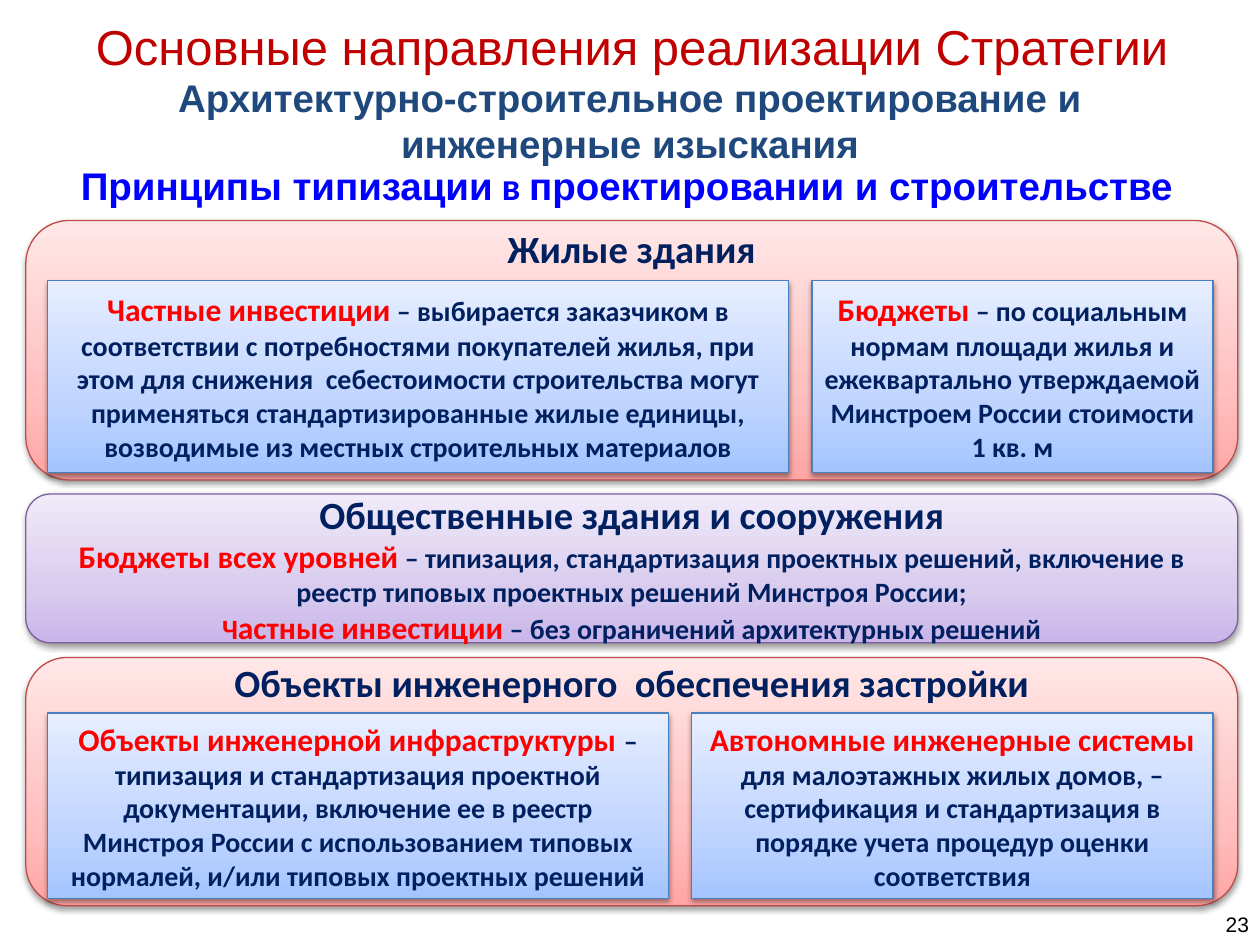
from copy import deepcopy

from lxml import etree
from pptx import Presentation
from pptx.dml.color import RGBColor
from pptx.enum.shapes import MSO_SHAPE
from pptx.enum.text import MSO_ANCHOR, MSO_AUTO_SIZE, PP_ALIGN
from pptx.oxml.ns import qn
from pptx.util import Pt

CENTER, RIGHT = PP_ALIGN.CENTER, PP_ALIGN.RIGHT
MIDDLE = MSO_ANCHOR.MIDDLE
NO_AUTOFIT = MSO_AUTO_SIZE.NONE
RECTANGLE, ROUNDED = MSO_SHAPE.RECTANGLE, MSO_SHAPE.ROUNDED_RECTANGLE
TITLE_ONLY = 5

COLORS = {
    "navy": "002060", "red": "FF0000", "dark red": "C00000",
    "blue": "0000FF", "steel": "1F497D", "black": "000000",
}
THEMES = {
    "pink": (("FFA6A5", "FFC0BF", "FFE7E7"), "BF4C48"),
    "violet": (("C9B5E8", "D8CBEE", "F0EAF9"), "7D60A0"),
    "sky": (("A4C4FF", "BFD4FF", "E6EEFF"), "4B7EBC"),
}
STOPS = (0, 0.35, 1)

STYLES = {
    "heading": ("Calibri", 22, True, "navy"),
    "lead": ("Calibri", 18, True, "red"),
    "initial": ("Calibri", 16, True, "red"),
    "body": ("Calibri", 16, True, "navy"),
    "title": ("Arial", 22, True, "blue"),
    "title joint": ("Calibri", 22, True, "blue"),
    "subject": ("Arial", 22, True, "steel"),
    "strategy": ("Arial", 28, False, "dark red"),
    "number": ("Arial", 12, False, "black"),
}

TITLE = [[("Принципы типизации", "title"), (" в ", "title joint"),
          ("проектировании и строительстве", "title")]]
TITLE_FRAME = (27.4, 89.3, 661.7, 32.4)

LABELS = [
    ((2.9, 43.2, 714.2, 51.1), CENTER,
     [[("Архитектурно-строительное проектирование и", "subject")],
      [("инженерные изыскания", "subject")]]),
    ((14.4, 0, 693.4, 52.6), CENTER,
     [[("Основные направления реализации Стратегии", "strategy")]]),
    ((689.8, 513.4, 31, 28.8), RIGHT, [[("23", "number")]]),
]

PUBLIC_BUILDINGS = [
    [("Общественные здания и сооружения", "heading")],
    [("Бюджеты всех уровней", "lead"),
     (" – типизация, стандартизация проектных решений, включение в реестр "
      "типовых проектных решений Минстроя России;", "body")],
    [("Ч", "initial"), ("астные инвестиции", "lead"),
     (" – без ограничений архитектурных решений", "body")],
]

PANEL_LEFT, PANEL_WIDTH = 14.7, 692.6
CARD_LEFT, CARD_RIGHT, CARD_GAP = 27.2, 693.2, 13.4
CARD_BOTTOM_MARGIN = 4.3

PANELS = [
    {
        "top": 126, "height": 148.3, "theme": "pink", "heading center": 15.7,
        "text": [[("Жилые здания", "heading")]],
        "card top": 160.4, "first card width": 423.4,
        "cards": [
            [[("Частные инвестиции", "lead"),
              (" – выбирается заказчиком в соответствии с потребностями "
               "покупателей жилья, при этом для снижения  себестоимости "
               "строительства могут применяться стандартизированные жилые "
               "единицы, возводимые из местных строительных материалов",
               "body")]],
            [[("Бюджеты", "lead"),
              (" – по социальным нормам площади жилья и ежеквартально "
               "утверждаемой Минстроем России стоимости 1 кв. м", "body")]],
        ],
    },
    {
        "top": 282.3, "height": 85, "theme": "violet",
        "text": PUBLIC_BUILDINGS, "cards": [],
    },
    {
        "top": 375.7, "height": 141.9, "theme": "pink", "heading center": 14,
        "text": [[("Объекты инженерного  обеспечения застройки", "heading")]],
        "card top": 407.5, "first card width": 354.7,
        "cards": [
            [[("Объекты инженерной инфраструктуры ", "lead"),
              ("– типизация и стандартизация проектной документации, "
               "включение ее в реестр Минстроя России с использованием "
               "типовых нормалей, и/или типовых проектных решений", "body")]],
            [[("Автономные инженерные системы ", "lead"),
              ("для малоэтажных жилых домов, – сертификация и "
               "стандартизация в порядке учета процедур оценки "
               "соответствия", "body")]],
        ],
    },
]


def write_text(shape, paragraphs, alignment=CENTER):
    """Fill a shape with paragraphs of styled runs."""
    frame = shape.text_frame
    frame.word_wrap = True
    frame.auto_size = NO_AUTOFIT
    frame.vertical_anchor = MIDDLE
    for index, runs in enumerate(paragraphs):
        paragraph = frame.add_paragraph() if index else frame.paragraphs[0]
        paragraph.alignment = alignment
        for text, style in runs:
            run = paragraph.add_run()
            run.text = text
            font = run.font
            font.name, size, font.bold, color = STYLES[style]
            font.size = Pt(size)
            font.color.rgb = RGBColor.from_string(COLORS[color])


def add_shadow(shape):
    """Give a shape a soft shadow that falls straight down."""
    shape.shadow.inherit = False
    effects = shape.element.spPr.find(qn("a:effectLst"))
    shadow = etree.SubElement(
        effects, qn("a:outerShdw"), blurRad=str(Pt(3.1)), dist=str(Pt(1.6)),
        dir="5400000", rotWithShape="0")
    color = etree.SubElement(shadow, qn("a:srgbClr"), val=COLORS["black"])
    etree.SubElement(color, qn("a:alpha"), val="38000")


def add_block(slide, kind, frame, theme, paragraphs):
    """Add a shaded, outlined shape with text."""
    shape = slide.shapes.add_shape(kind, *map(Pt, frame))
    tones, outline = THEMES[theme]
    shape.fill.gradient()
    shape.fill.gradient_angle = 90
    stop_list = shape.element.spPr.find(qn("a:gradFill")).find(qn("a:gsLst"))
    stop_list.append(deepcopy(stop_list[0]))
    for stop, position, tone in zip(shape.fill.gradient_stops, STOPS, tones):
        stop.position = position
        stop.color.rgb = RGBColor.from_string(tone)
    shape.line.color.rgb = RGBColor.from_string(outline)
    shape.line.width = Pt(0.75)
    add_shadow(shape)
    write_text(shape, paragraphs)
    return shape


def add_panel(slide, panel):
    """Add a rounded panel and its row of cards."""
    top, height = panel["top"], panel["height"]
    shape = add_block(slide, ROUNDED, (PANEL_LEFT, top, PANEL_WIDTH, height),
                      panel["theme"], panel["text"])
    if not panel["cards"]:
        return
    shape.text_frame.margin_top = 0
    shape.text_frame.margin_bottom = Pt(height - 2 * panel["heading center"])
    card_top = panel["card top"]
    card_height = top + height - CARD_BOTTOM_MARGIN - card_top
    first_width = panel["first card width"]
    second_left = CARD_LEFT + first_width + CARD_GAP
    columns = [(CARD_LEFT, first_width),
               (second_left, CARD_RIGHT - second_left)]
    for (left, width), paragraphs in zip(columns, panel["cards"]):
        add_block(slide, RECTANGLE, (left, card_top, width, card_height),
                  "sky", paragraphs)


def main():
    """Build and save the slide."""
    presentation = Presentation()
    presentation.slide_width, presentation.slide_height = Pt(720), Pt(540)
    slide = presentation.slides.add_slide(
        presentation.slide_layouts[TITLE_ONLY])
    title = slide.shapes.title
    title.left, title.top, title.width, title.height = map(Pt, TITLE_FRAME)
    write_text(title, TITLE)
    for frame, alignment, paragraphs in LABELS:
        label = slide.shapes.add_textbox(*map(Pt, frame))
        write_text(label, paragraphs, alignment)
    for panel in PANELS:
        add_panel(slide, panel)
    presentation.save("out.pptx")


if __name__ == "__main__":
    main()
